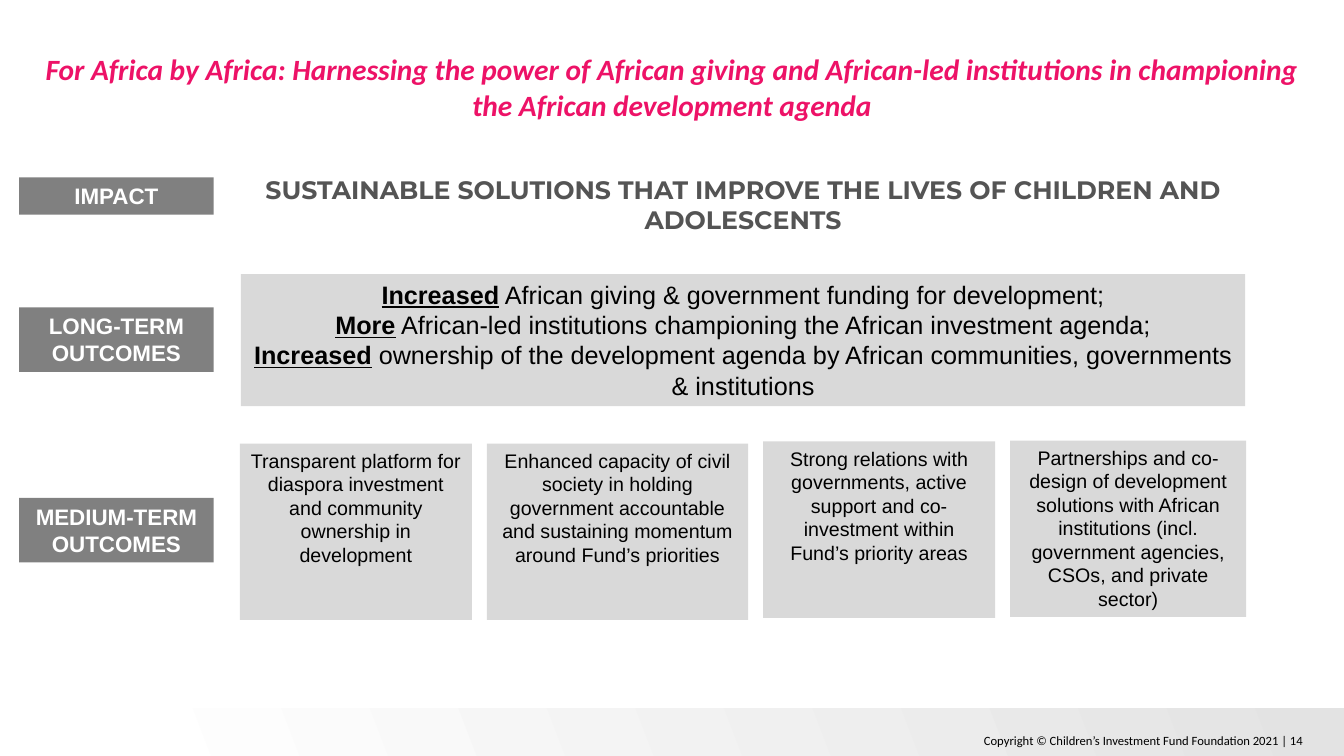
from pptx import Presentation
from pptx.dml.color import RGBColor
from pptx.enum.shapes import MSO_SHAPE as Shape
from pptx.enum.text import MSO_ANCHOR as Anchor, PP_ALIGN as Align
from pptx.util import Inches, Pt


def color(code):
    return RGBColor.from_string(code)


def write(frame, paras, size=14, font="Arial", ink="000000", bold=False,
          italic=False, align=Align.CENTER, anchor=Anchor.TOP, inset=None):
    """Fill a frame; a paragraph is a string or a (stressed lead, rest) pair."""
    frame.word_wrap = True
    frame.vertical_anchor = anchor
    if inset is not None:
        frame.margin_left = frame.margin_right = Inches(inset)
        frame.margin_top = frame.margin_bottom = Inches(inset)
    for i, para in enumerate(paras):
        line = frame.add_paragraph() if i else frame.paragraphs[0]
        line.alignment = align
        lead, rest = ("", para) if isinstance(para, str) else para
        for text, stress in ((lead, True), (rest, False)):
            if not text:
                continue
            run = line.add_run()
            run.text = text
            face = run.font
            face.name, face.size = font, Pt(size)
            face.bold, face.italic = bold or stress, italic
            face.underline = stress
            face.color.rgb = color(ink)


class Board:
    pink, gray, pale, slate = "ED1267", "808080", "D9D9D9", "545454"

    def __init__(self, slide):
        self.slide = slide

    def rect(self, left, top, width, height):
        box = self.slide.shapes.add_shape(
            Shape.RECTANGLE, *map(Inches, (left, top, width, height)))
        box.shadow.inherit = False
        box.line.fill.background()
        return box

    def panel(self, place, fill, paras, **style):
        box = self.rect(*place)
        box.fill.solid()
        box.fill.fore_color.rgb = color(fill)
        write(box.text_frame, paras, **style)

    def label(self, text, top, height):
        self.panel((0.19, top, 1.93, height), self.gray, [text],
                   size=16, ink="FFFFFF", bold=True)

    def text(self, place, text, **style):
        box = self.slide.shapes.add_textbox(*map(Inches, place))
        write(box.text_frame, [text], **style)

    def band(self, *place):
        """Draw the strip that fades from white to gray."""
        fill = self.rect(*place).fill
        fill.gradient()
        fill.gradient_angle = 21
        stops = ((0.09, "FFFFFF"), (1, "E3E3E3"))
        for stop, (pos, tone) in zip(fill.gradient_stops, stops):
            stop.position = pos
            stop.color.rgb = color(tone)


LABELS = [("IMPACT", 1.76, 0.37), ("LONG-TERM OUTCOMES", 3.05, 0.64),
          ("MEDIUM-TERM OUTCOMES", 4.94, 0.64)]
GOALS = [
    ("Increased", " African giving & government funding for development;"),
    ("More", " African-led institutions championing the African investment agenda;"),
    ("Increased", " ownership of the development agenda by African communities, "
     "governments & institutions"),
]
CARDS = [  # top, width, text
    (4.4, 2.3, "Transparent platform for diaspora investment and community "
     "ownership in development"),
    (4.4, 2.59, "Enhanced capacity of civil society in holding government "
     "accountable and sustaining momentum around Fund’s priorities"),
    (4.38, 2.3, "Strong relations with governments, active support and "
     "co-investment within Fund’s priority areas"),
    (4.37, 2.34, "Partnerships and co-design of development solutions with African "
     "institutions (incl. government agencies, CSOs, and private sector)"),
]
GAP = 0.15


def main():
    deck = Presentation()
    deck.slide_width, deck.slide_height = Inches(13.33), Inches(7.5)
    board = Board(deck.slides.add_slide(deck.slide_layouts[6]))

    board.band(0, 7.03, 13.33, 0.47)
    board.text((0.36, 0.51, 12.61, 0.33),
               "For Africa by Africa: Harnessing the power of African giving and "
               "African-led institutions in championing the African development agenda",
               size=21, font="Calibri", ink=board.pink, bold=True, italic=True, inset=0)
    for label in LABELS:
        board.label(*label)
    board.text((2.39, 1.68, 9.96, 0.71),
               "SUSTAINABLE SOLUTIONS THAT IMPROVE THE LIVES OF CHILDREN AND ADOLESCENTS",
               size=18, font="Montserrat", ink=board.slate, bold=True)
    board.panel((2.39, 2.72, 9.96, 1.31), board.pale, GOALS, size=18)
    left = 2.38
    for top, width, text in CARDS:
        board.panel((left, top, width, 1.75), board.pale, [text])
        left += width + GAP
    board.text((9.66, 7.26, 3.51, 0.18),
               "Copyright © Children’s Investment Fund Foundation 2021 | 14",
               size=9, font="Calibri", align=Align.LEFT, anchor=Anchor.MIDDLE)
    deck.save("out.pptx")


if __name__ == "__main__":
    main()
